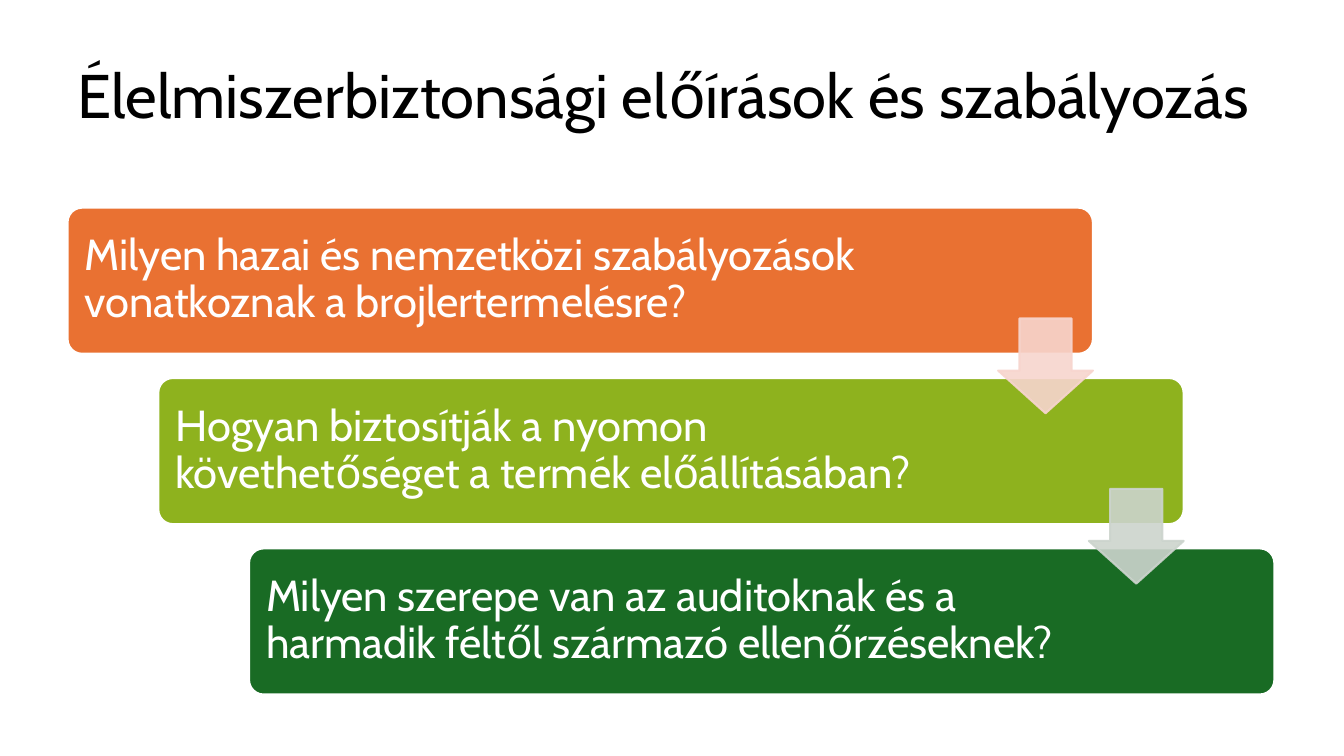
import pptx
import pptx.dml.color
import pptx.enum.shapes
import pptx.enum.text
import pptx.oxml
import pptx.oxml.ns
import pptx.util

Inches = pptx.util.Inches
RGBColor = pptx.dml.color.RGBColor
Shape = pptx.enum.shapes.MSO_SHAPE
Anchor = pptx.enum.text.MSO_ANCHOR

BLACK = RGBColor(0x00, 0x00, 0x00)
WHITE = RGBColor(0xFF, 0xFF, 0xFF)
ORANGE = RGBColor(0xE9, 0x71, 0x32)
LIME = RGBColor(0x8E, 0xB2, 0x1E)
GREEN = RGBColor(0x19, 0x6B, 0x24)
PALE_PINK = RGBColor(0xF7, 0xD5, 0xCE)
PALE_GREY = RGBColor(0xCC, 0xD4, 0xCD)

# Staircase geometry, in inches
FIRST_LEFT, FIRST_TOP = 0.67, 2.06
STEP_RIGHT, STEP_DOWN = 0.9, 1.69
CARD_WIDTH, CARD_HEIGHT = 10.17, 1.45
TEXT_OFFSET, TEXT_HEIGHT = 0.04, 1.36
ARROW_SIZE = 0.94
ARROW_RIGHT, ARROW_DOWN = 9.23, 1.1

# Question, card colour, text width, colour of the arrow to the next card
QUESTIONS = [
    ("Milyen hazai és nemzetközi szabályozások vonatkoznak a brojlertermelésre?",
     ORANGE, 8.61, PALE_PINK),
    ("Hogyan biztosítják a nyomon követhetőséget a termék előállításában?",
     LIME, 8.25, PALE_GREY),
    ("Milyen szerepe van az auditoknak és a harmadik féltől származó ellenőrzéseknek?",
     GREEN, 8.25, None),
]


def write_text(frame, text, font="Cabin", size=31, color=WHITE,
               anchor=Anchor.MIDDLE, line_spacing=0.9):
    frame.word_wrap = True
    frame.vertical_anchor = anchor
    paragraph = frame.paragraphs[0]
    paragraph.alignment = pptx.enum.text.PP_ALIGN.LEFT
    paragraph.line_spacing = line_spacing
    run = paragraph.add_run()
    run.text = text
    run.font.name = font
    run.font.size = pptx.util.Pt(size)
    run.font.color.rgb = color


class SlideBuilder:
    line_width = pptx.util.Pt(1.5)
    card_inset = Inches(0.13)

    def __init__(self, slide):
        self.slide = slide

    def title(self, left, top, width, height, text):
        box = self.slide.shapes.add_textbox(
            Inches(left), Inches(top), Inches(width), Inches(height))
        write_text(box.text_frame, text, size=44, color=BLACK, anchor=Anchor.TOP)

    def filled_shape(self, kind, left, top, width, height, adjustments, fill, line):
        shape = self.slide.shapes.add_shape(
            kind, Inches(left), Inches(top), Inches(width), Inches(height))
        shape.shadow.inherit = False
        for index, value in enumerate(adjustments):
            shape.adjustments[index] = value
        shape.fill.solid()
        shape.fill.fore_color.rgb = fill
        shape.line.color.rgb = line
        shape.line.width = self.line_width
        return shape

    def card(self, left, top, text, color, text_width):
        self.filled_shape(Shape.ROUNDED_RECTANGLE, left, top,
                          CARD_WIDTH, CARD_HEIGHT, [0.1], color, WHITE)
        box = self.slide.shapes.add_textbox(
            Inches(left + TEXT_OFFSET), Inches(top + TEXT_OFFSET),
            Inches(text_width), Inches(TEXT_HEIGHT))
        frame = box.text_frame
        frame.margin_left = frame.margin_right = self.card_inset
        frame.margin_top = frame.margin_bottom = self.card_inset
        write_text(frame, text)

    def arrow(self, left, top, color, opacity=90):
        shape = self.filled_shape(Shape.DOWN_ARROW, left, top, ARROW_SIZE,
                                  ARROW_SIZE, [0.55, 0.45], color, color)
        # Transparency of both fill and outline
        for color_element in shape.element.spPr.iter(pptx.oxml.ns.qn("a:srgbClr")):
            alpha = pptx.oxml.parse_xml(
                f'<a:alpha {pptx.oxml.ns.nsdecls("a")} val="{opacity * 1000}"/>')
            color_element.append(alpha)


def main():
    presentation = pptx.Presentation()
    presentation.slide_width = Inches(13.33)
    presentation.slide_height = Inches(7.5)
    builder = SlideBuilder(presentation.slides.add_slide(presentation.slide_layouts[6]))

    # Title
    builder.title(0.67, 0.6, 11.97, 1.24,
                  "Élelmiszerbiztonsági előírások és szabályozás")

    # Cards, stepping down to the right
    corners = [(FIRST_LEFT + step * STEP_RIGHT, FIRST_TOP + step * STEP_DOWN)
               for step in range(len(QUESTIONS))]
    for (left, top), (text, color, text_width, _) in zip(corners, QUESTIONS):
        builder.card(left, top, text, color, text_width)

    # Arrows between the cards, on top of them
    for (left, top), (*_, arrow_color) in zip(corners, QUESTIONS):
        if arrow_color is not None:
            builder.arrow(left + ARROW_RIGHT, top + ARROW_DOWN, arrow_color)

    presentation.save("out.pptx")


if __name__ == "__main__":
    main()
